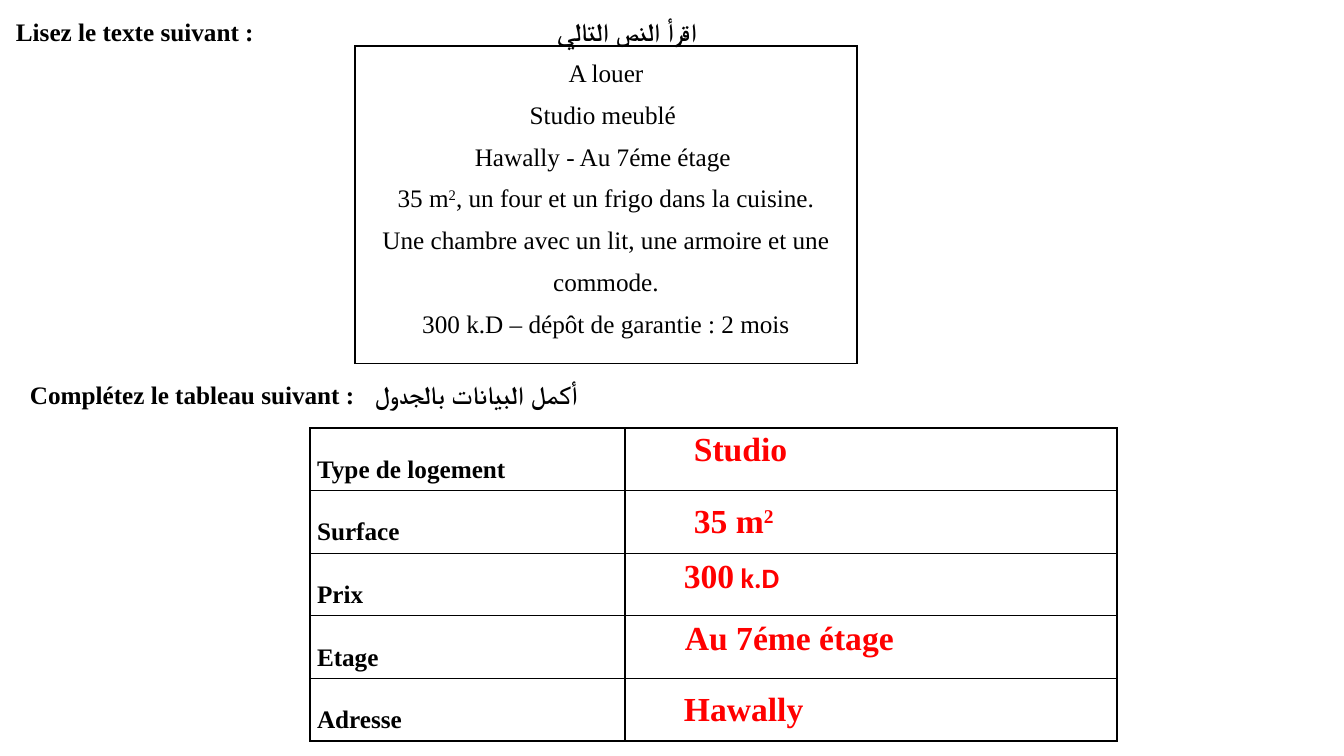
from lxml.etree import SubElement
from pptx import Presentation
from pptx.dml.color import RGBColor
from pptx.enum.text import PP_ALIGN
from pptx.oxml.ns import qn
from pptx.util import Emu, Pt

SLIDE_SIZE = (1344, 756)
SERIF = "Times New Roman"
BLACK, RED = "000000", "FF0000"

HEADINGS = [
    ("Lisez le texte suivant :\tاقرأ النص التالي", (6, -4, 880, 50), 541),
    ("Complétez le tableau suivant :\tأكمل البيانات بالجدول", (20, 359, 798, 50), 345),
]
ADVERT = [
    "A louer",
    "Studio meublé ",
    "Hawally - Au 7éme étage ",
    "35 m^2^, un four et un frigo dans la cuisine.",
    "Une chambre avec un lit, une armoire et une commode.",
    "300 k.D – dépôt de garantie : 2 mois",
]
ADVERT_BOX = (355, 46, 502, 317)
LABELS = ["Type de logement", "Surface", "Prix", "Etage", "Adresse"]
FORM_BOX = (310, 428, 807, 313)
FORM_COLUMNS = [315, 492]
ANSWERS = [
    ("Studio", "", (684, 423, 195, 32)),
    ("35 m^2^", "", (684, 495, 195, 32)),
    ("300", " k.D", (674, 550, 195, 32)),
    ("Au 7éme étage", "", (675, 612, 344, 30)),
    ("Hawally", "", (674, 683, 469, 50)),
]


def px(length):
    return Emu(round(length * 914400 / 100.8))


def color(value):
    return RGBColor.from_string(value)


def write(paragraph, text, size, fill, bold, spacing=1.0):
    paragraph.line_spacing = spacing
    font = paragraph.font
    font.name, font.size, font.bold = SERIF, Pt(size), bold
    font.color.rgb = color(fill)
    for index, part in enumerate(text.split("^")):
        if part:
            run = paragraph.add_run()
            run.text = part
            if index % 2:
                run.font._element.set("baseline", "30000")


def add_text(slide, box):
    frame = slide.shapes.add_textbox(*map(px, box)).text_frame
    frame.word_wrap = True
    return frame.paragraphs[0]


def add_tab(paragraph, position):
    properties = paragraph._p.get_or_add_pPr()
    tabs = SubElement(properties, qn("a:tabLst"))
    SubElement(tabs, qn("a:tab"), pos=str(px(position)), algn="l")
    default_font = properties.find(qn("a:defRPr"))
    default_font.addprevious(tabs)


def style_cell(cell):
    cell.margin_left = cell.margin_right = px(7)
    cell.margin_top = cell.margin_bottom = 0
    properties = cell._tc.get_or_add_tcPr()
    for side in ("lnL", "lnR", "lnT", "lnB"):
        line = SubElement(properties, qn(f"a:{side}"), w=str(Pt(1)))
        fill = SubElement(line, qn("a:solidFill"))
        SubElement(fill, qn("a:srgbClr"), val=BLACK)
    cell.fill.background()


def add_grid(slide, box, row_count, columns):
    table = slide.shapes.add_table(row_count, len(columns), *map(px, box)).table
    table.first_row = table.horz_banding = False
    for column, width in zip(table.columns, columns):
        column.width = px(width)
    for row in table.rows:
        row.height = px(box[3] / row_count)
    for cell in table.iter_cells():
        style_cell(cell)
    return table


def main():
    presentation = Presentation()
    presentation.slide_width, presentation.slide_height = map(px, SLIDE_SIZE)
    slide = presentation.slides.add_slide(presentation.slide_layouts[6])

    for text, box, tab in HEADINGS:
        paragraph = add_text(slide, box)
        write(paragraph, text, 18, BLACK, True, 1.5)
        add_tab(paragraph, tab)

    advert = add_grid(slide, ADVERT_BOX, 1, [ADVERT_BOX[2]]).cell(0, 0).text_frame
    for index, text in enumerate(ADVERT):
        paragraph = advert.add_paragraph() if index else advert.paragraphs[0]
        paragraph.alignment = PP_ALIGN.CENTER
        write(paragraph, text, 18, BLACK, False, 1.5)

    form = add_grid(slide, FORM_BOX, len(LABELS), FORM_COLUMNS)
    for row, label in enumerate(LABELS):
        write(form.cell(row, 0).text_frame.paragraphs[0], label, 18, BLACK, True, 2.0)

    for text, unit, box in ANSWERS:
        paragraph = add_text(slide, box)
        write(paragraph, text, 24, RED, True)
        if unit:
            run = paragraph.add_run()
            run.text = unit
            run.font.name, run.font.size = "Calibri", Pt(20)

    presentation.save("out.pptx")


if __name__ == "__main__":
    main()
